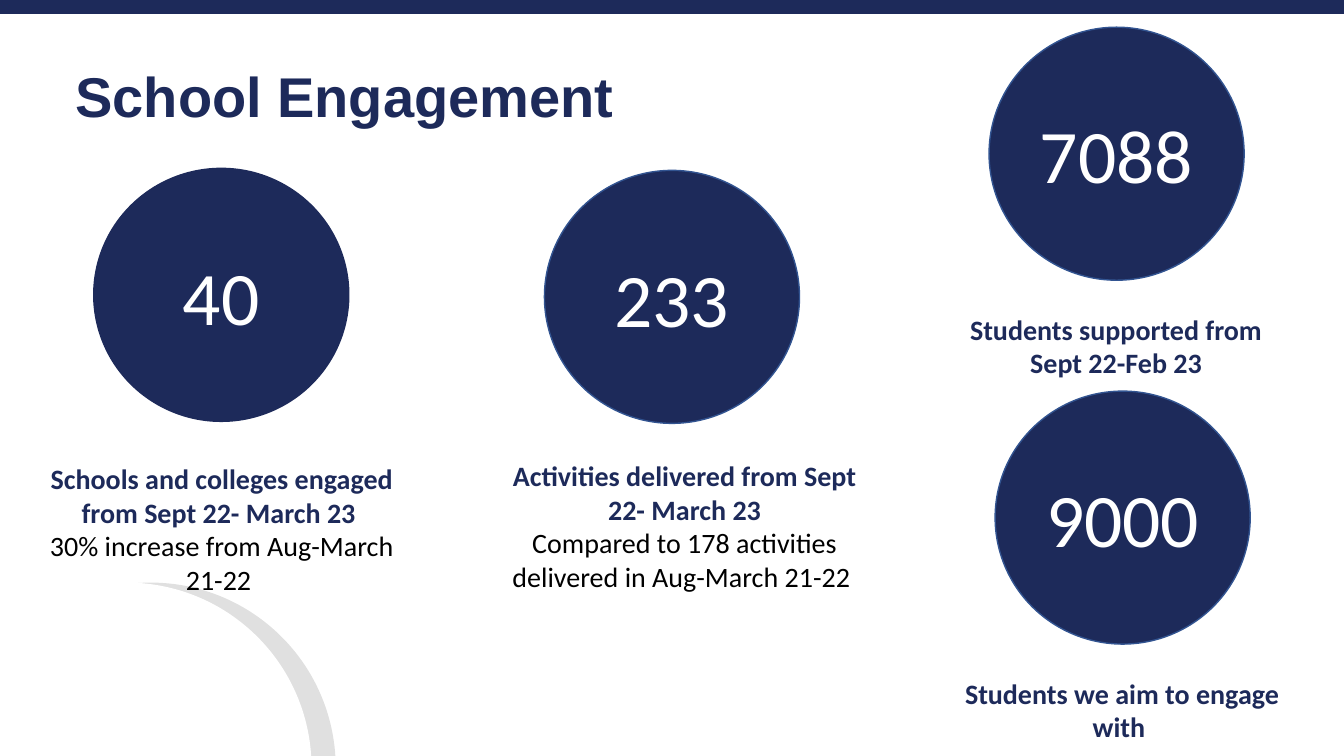
from lxml import etree
from pptx import Presentation
from pptx.dml.color import RGBColor
from pptx.enum.shapes import MSO_SHAPE
from pptx.enum.text import MSO_ANCHOR, PP_ALIGN
from pptx.oxml.ns import qn
from pptx.util import Inches, Pt

THEME = {
    "navy": "1D2A5A", "edge": "325491", "white": "FFFFFF", "black": "000000",
    "title_font": "Arial", "body_font": "Calibri",
    "title": 40, "number": 54, "caption": 20,
}

TITLE = "School Engagement"
# number, circle left and top, outline, caption left, top and width, heading, comparison
STATS = [
    ("40", (0.93, 1.67), "navy", (0.38, 4.53, 3.64),
     "Schools and colleges engaged from Sept 22- March 23 ",
     "30% increase from Aug-March 21-22 "),
    ("233", (5.4, 1.69), "edge", (4.84, 4.5, 3.9),
     "Activities delivered from Sept 22- March 23",
     "Compared to 178 activities delivered in Aug-March 21-22 "),
    ("7088", (9.81, 0.27), "edge", (9.25, 3.05, 3.64),
     "Students supported from Sept 22-Feb 23", None),
    ("9000", (9.87, 3.88), "edge", (9.31, 6.66, 3.64),
     "Students we aim to engage with ", None),
]
CIRCLE_W, CIRCLE_H = 2.53, 2.51
RING_TOP, RING_SIZE = 5.78, 3.67


def color(name):
    return RGBColor.from_string(THEME[name])


def add_filled(s, kind, box, fill, line=None, alpha=None):
    sp = s.shapes.add_shape(kind, *map(Inches, box))
    sp.shadow.inherit = False
    sp.fill.solid()
    sp.fill.fore_color.rgb = color(fill)
    if alpha:
        clr = sp.fill._xPr.find(".//" + qn("a:srgbClr"))
        etree.SubElement(clr, qn("a:alpha")).set("val", str(alpha * 1000))
    if line:
        sp.line.color.rgb = color(line)
        sp.line.width = Pt(1)
    else:
        sp.line.fill.background()
    return sp


def style(p, size, fill, font="body_font", bold=False, align=PP_ALIGN.CENTER):
    p.alignment = align
    for r in p.runs:
        r.font.name = THEME[font]
        r.font.size = Pt(THEME[size])
        r.font.bold = bold
        r.font.color.rgb = color(fill)


def add_text(s, box, lines):
    tf = s.shapes.add_textbox(*map(Inches, box)).text_frame
    tf.word_wrap = True
    tf.text = "\n".join(lines)
    return tf


prs = Presentation()
prs.slide_width, prs.slide_height = Inches(13.33), Inches(7.5)
s = prs.slides.add_slide(prs.slide_layouts[6])

# Grey crescent: a white disc over a translucent one
for left, fill, alpha in [(-0.34, "black", 12), (-0.58, "white", None)]:
    add_filled(s, MSO_SHAPE.OVAL, (left, RING_TOP, RING_SIZE, RING_SIZE), fill, alpha=alpha)

# Title and top band
p = add_text(s, (0.65, 0.64, 11.28, 1.09), [TITLE]).paragraphs[0]
p.line_spacing = 0.9
style(p, "title", "navy", "title_font", True, PP_ALIGN.LEFT)
add_filled(s, MSO_SHAPE.RECTANGLE, (0, 0, 13.33, 0.13), "navy", "navy")

# Statistic circles with captions
for number, (left, top), edge, (cap_left, cap_top, cap_w), heading, note in STATS:
    tf = add_filled(s, MSO_SHAPE.OVAL, (left, top, CIRCLE_W, CIRCLE_H), "navy", edge).text_frame
    tf.text = number
    tf.vertical_anchor = MSO_ANCHOR.MIDDLE
    style(tf.paragraphs[0], "number", "white")

    lines = [heading, note] if note else [heading]
    cap_h = 1.45 if note else 0.77
    tf = add_text(s, (cap_left, cap_top, cap_w, cap_h), lines)
    for i, p in enumerate(tf.paragraphs):
        style(p, "caption", "black" if i else "navy", bold=i == 0)

prs.save("out.pptx")
